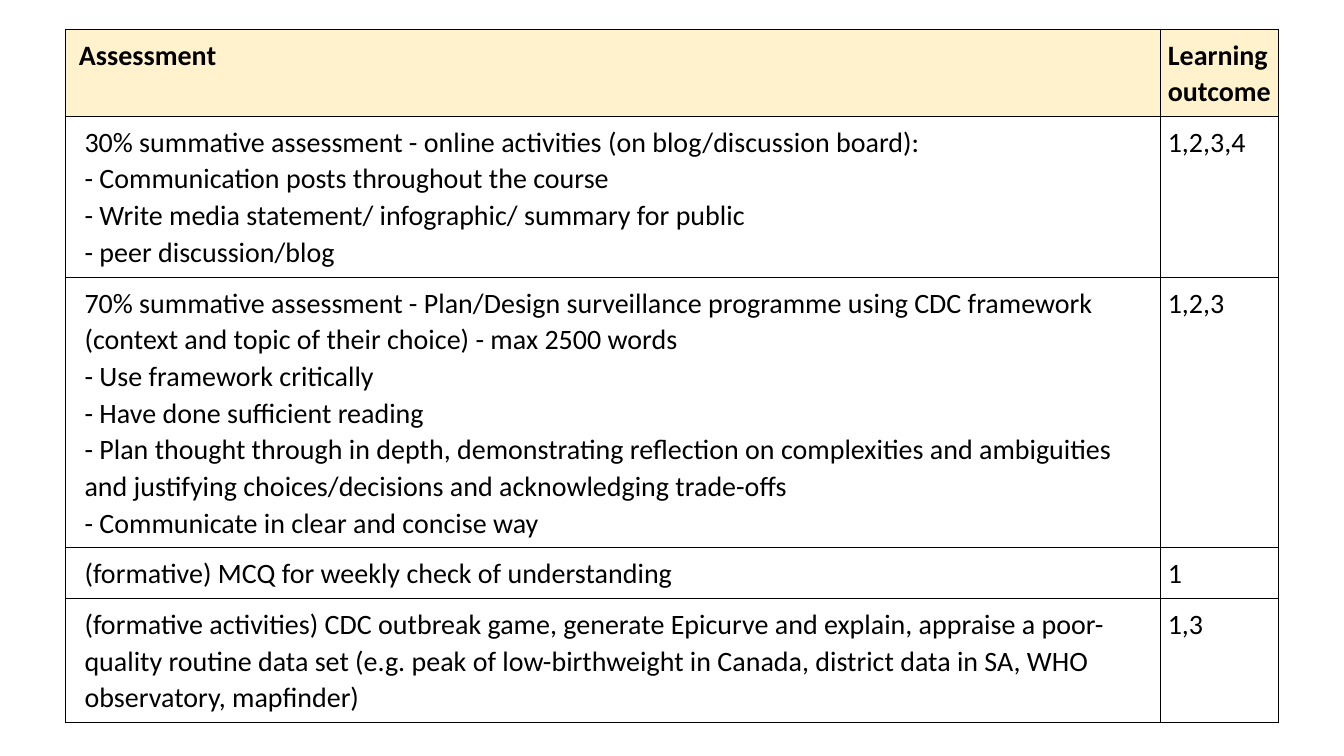
from lxml.etree import SubElement
from pptx import Presentation
from pptx.dml.color import RGBColor
from pptx.oxml.ns import qn
from pptx.util import Cm, Pt

BLACK = RGBColor(0x00, 0x00, 0x00)
CREAM = RGBColor(0xFF, 0xF2, 0xCC)
FONT = "Calibri"
SIDE_INSET = Cm(0.18)
END_INSET = Cm(0.17)
HEADING_INDENT = Cm(0.16)
BODY_INDENT = Cm(0.3)
COLUMN_WIDTHS = (27.6, 2.97)
ROW_HEIGHTS = (2.19, 4.06, 6.8, 1.29, 3.12)
HEADINGS = ("Assessment", "Learning outcome")
ASSESSMENTS = [
    (["30% summative assessment - online activities (on blog/discussion board):",
      "- Communication posts throughout the course",
      "- Write media statement/ infographic/ summary for public",
      "- peer discussion/blog"], "1,2,3,4"),
    (["70% summative assessment - Plan/Design surveillance programme using CDC "
      "framework (context and topic of their choice) - max 2500 words",
      "- Use framework critically",
      "- Have done sufficient reading",
      "- Plan thought through in depth, demonstrating reflection on complexities "
      "and ambiguities and justifying choices/decisions and acknowledging trade-offs",
      "- Communicate in clear and concise way"], "1,2,3"),
    (["(formative) MCQ for weekly check of understanding"], "1"),
    (["(formative activities) CDC outbreak game, generate Epicurve and explain, "
      "appraise a poor-quality routine data set (e.g. peak of low-birthweight in "
      "Canada, district data in SA, WHO",
      "observatory, mapfinder)"], "1,3"),
]


def draw_borders(cell):
    """Give the cell a thin black line on all four sides."""
    properties = cell._tc.get_or_add_tcPr()
    for side in ("lnL", "lnR", "lnT", "lnB"):
        line = SubElement(properties, qn(f"a:{side}"), w=str(Pt(1)))
        solid = SubElement(line, qn("a:solidFill"))
        SubElement(solid, qn("a:srgbClr"), val=str(BLACK))


def fill_cell(cell, lines, indent=0, space_after=0, heading=False):
    """Format one cell and write one paragraph for each line."""
    draw_borders(cell)
    if heading:
        cell.fill.solid()
        cell.fill.fore_color.rgb = CREAM
    else:
        cell.fill.background()
    cell.margin_left = cell.margin_right = SIDE_INSET
    cell.margin_top = cell.margin_bottom = END_INSET
    frame = cell.text_frame
    for number, line in enumerate(lines):
        para = frame.add_paragraph() if number else frame.paragraphs[0]
        para.line_spacing = 1.07
        para.space_after = Pt(space_after)
        properties = para._p.get_or_add_pPr()
        properties.set("marL", str(int(indent)))
        properties.set("indent", "0")
        span = para.add_run()
        span.text = line
        span.font.name = FONT
        span.font.size = Pt(20)
        span.font.bold = heading
        span.font.color.rgb = BLACK


def add_assessment_table(page, left, top):
    """Place the table of assessments and their learning outcomes."""
    table = page.shapes.add_table(
        len(ROW_HEIGHTS), len(COLUMN_WIDTHS), left, top,
        Cm(sum(COLUMN_WIDTHS)), Cm(sum(ROW_HEIGHTS))).table
    table.first_row = False
    table.horz_banding = False
    for column, width in zip(table.columns, COLUMN_WIDTHS):
        column.width = Cm(width)
    for row, height in zip(table.rows, ROW_HEIGHTS):
        row.height = Cm(height)
    for column, (heading, indent) in enumerate(zip(HEADINGS, (HEADING_INDENT, 0))):
        fill_cell(table.cell(0, column), [heading], indent, 8, heading=True)
    for row, (lines, outcomes) in enumerate(ASSESSMENTS, start=1):
        fill_cell(table.cell(row, 0), lines, BODY_INDENT)
        fill_cell(table.cell(row, 1), [outcomes], space_after=8)


def main():
    """Build the one-page deck and save it."""
    deck = Presentation()
    deck.slide_width, deck.slide_height = Cm(33.87), Cm(19.05)
    page = deck.slides.add_slide(deck.slide_layouts[6])
    add_assessment_table(page, Cm(1.65), Cm(0.74))
    deck.save("out.pptx")


if __name__ == "__main__":
    main()
